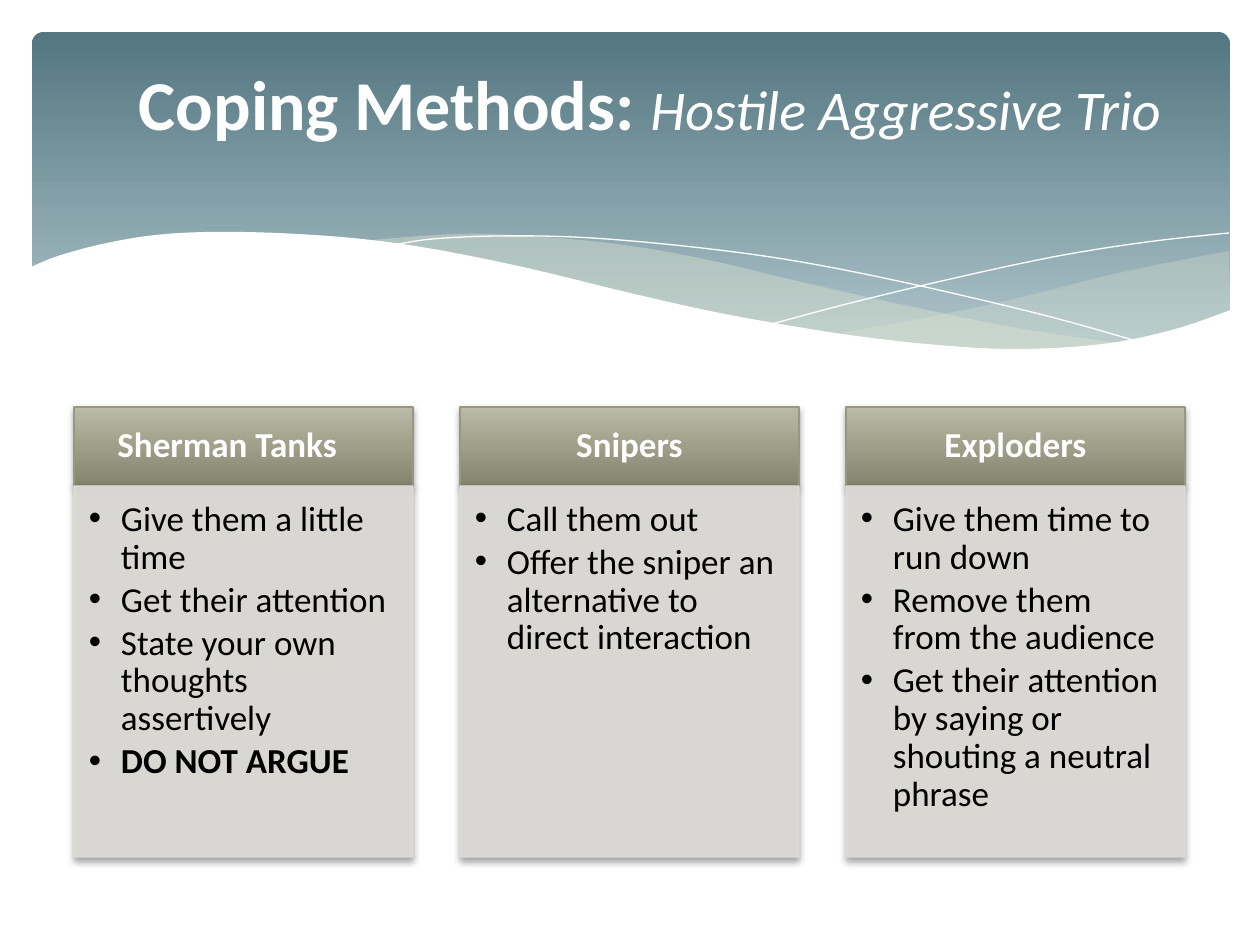
from lxml import etree
from pptx import Presentation
from pptx.dml.color import RGBColor
from pptx.enum.shapes import MSO_SHAPE
from pptx.enum.text import MSO_ANCHOR, PP_ALIGN
from pptx.oxml.ns import qn
from pptx.util import Emu, Pt

RECTANGLE, ROUNDED = MSO_SHAPE.RECTANGLE, MSO_SHAPE.ROUNDED_RECTANGLE
TOP, MIDDLE = MSO_ANCHOR.TOP, MSO_ANCHOR.MIDDLE
LEFT, CENTER = PP_ALIGN.LEFT, PP_ALIGN.CENTER

EMU_PER_PX = 914400 / 126
CURVE_STEPS = 6

WHITE, BLACK, MIST = "FFFFFF", "000000", "DFE6D0"
BANNER_STOPS = [("537680", 0), ("ACC2C9", 0.9)]
HEADER_STOPS = [("BBBAA6", 0), ("84836C", 1)]
HEADER_LINE, BODY_FILL = "99987F", "DEDDD8"

RIGHT_SWELL = [
    [(1229, 251), (1123, 272), (1014, 299), (919, 319), (833, 334)],
    [(833, 334), (888, 341), (954, 348), (1026, 350), (1099, 345), (1160, 334), (1230, 311)],
]
MIDDLE_SWELL = [
    [(1125, 344), (1017, 328), (890, 302), (793, 280), (699, 258), (616, 244),
     (529, 236), (455, 234), (360, 241)],
    [(360, 241), (456, 256), (566, 280), (668, 302), (757, 321), (857, 338),
     (942, 348), (1031, 350), (1092, 348), (1125, 344)],
]
FALLING_LINE = [[(389, 246), (433, 239), (505, 236), (591, 238), (701, 248),
                 (801, 262), (916, 285), (1047, 316), (1143, 343)]]
RISING_LINE = [[(772, 324), (847, 304), (942, 281), (1053, 257), (1147, 242), (1229, 233)]]
WHITE_WAVE = [
    [(1231, 310), (1172, 330), (1103, 344), (1019, 349), (937, 345), (842, 334),
     (730, 315), (634, 294), (527, 268), (427, 248), (341, 237), (243, 232),
     (166, 234), (107, 243), (58, 256), (29, 268)],
    [(29, 415)],
    [(1231, 415)],
]

COLUMNS = [
    ("Sherman Tanks\t", [
        ("Give them a little time", False),
        ("Get their attention", False),
        ("State your own thoughts assertively", False),
        ("DO NOT ARGUE", True),
    ]),
    ("Snipers", [
        ("Call them out", False),
        ("Offer the sniper an alternative to direct interaction", False),
    ]),
    ("Exploders", [
        ("Give them time to run down", False),
        ("Remove them from the audience", False),
        ("Get their attention by saying or shouting a neutral phrase", False),
    ]),
]
COLUMN_LEFT, COLUMN_PITCH, COLUMN_WIDTH = 74, 386, 339
HEADER_TOP, HEADER_HEIGHT, BODY_HEIGHT = 407, 79, 371


def px(length):
    return Emu(round(length * EMU_PER_PX))


def color(hex_string):
    return RGBColor.from_string(hex_string)


def smooth(knots):
    """Sample a Catmull-Rom curve that passes through the knots."""
    padded = [knots[0], *knots, knots[-1]]
    points = [knots[0]]
    for a, b, c, d in zip(padded, padded[1:], padded[2:], padded[3:]):
        for step in range(1, CURVE_STEPS + 1):
            t = step / CURVE_STEPS
            points.append(tuple(
                (2 * q + (r - p) * t + (2 * p - 5 * q + 4 * r - s) * t ** 2
                 + (3 * q - p - 3 * r + s) * t ** 3) / 2
                for p, q, r, s in zip(a, b, c, d)))
    return points


def set_opacity(shape, percent):
    for node in shape.element.spPr.iter(qn("a:srgbClr")):
        etree.SubElement(node, qn("a:alpha"), val=str(percent * 1000))


def drop_shadow(shape):
    effects = shape.element.spPr.find(qn("a:effectLst"))
    outer = etree.SubElement(effects, qn("a:outerShdw"), blurRad=str(Pt(4)),
                             dist=str(Pt(2)), dir="5400000", rotWithShape="0")
    shade = etree.SubElement(outer, qn("a:srgbClr"), val=BLACK)
    etree.SubElement(shade, qn("a:alpha"), val="38000")


class SlideBuilder:
    def __init__(self, slide, font="Calibri"):
        self.shapes = slide.shapes
        self.font = font

    def paint(self, shape, fill=None, line=None, line_width=0.75):
        """Fill with a hex colour, a list of gradient stops, or nothing."""
        shape.shadow.inherit = False
        if fill is None:
            shape.fill.background()
        elif isinstance(fill, str):
            shape.fill.solid()
            shape.fill.fore_color.rgb = color(fill)
        else:
            shape.fill.gradient()
            shape.fill.gradient_angle = 270
            for stop, (tint, position) in zip(shape.fill.gradient_stops, fill):
                stop.color.rgb = color(tint)
                stop.position = position
        if line is None:
            shape.line.fill.background()
        else:
            shape.line.color.rgb = color(line)
            shape.line.width = Pt(line_width)

    def box(self, kind, left, top, width, height, fill, line=None):
        shape = self.shapes.add_shape(kind, px(left), px(top), px(width), px(height))
        self.paint(shape, fill, line)
        return shape

    def wave(self, curves, fill=None, line=None):
        points = [(px(x), px(y)) for knots in curves for x, y in smooth(knots)]
        builder = self.shapes.build_freeform(*points[0])
        builder.add_line_segments(points[1:], close=fill is not None)
        shape = builder.convert_to_shape()
        self.paint(shape, fill, line, 0)
        return shape

    def text_box(self, left, top, width, height):
        return self.shapes.add_textbox(px(left), px(top), px(width), px(height))

    def frame(self, shape, anchor, insets=(13, 6, 13, 6)):
        frame = shape.text_frame
        frame.word_wrap = True
        frame.vertical_anchor = anchor
        (frame.margin_left, frame.margin_top,
         frame.margin_right, frame.margin_bottom) = map(px, insets)
        return frame

    def para(self, para, spans, align=LEFT, spacing=0.9, after=0):
        para.alignment = align
        para.line_spacing = spacing
        para.space_after = Pt(after)
        for text, size, tint, bold, italic in spans:
            span = para.add_run()
            span.text = text
            font = span.font
            font.name, font.size = self.font, Pt(size)
            font.bold, font.italic = bold, italic
            font.color.rgb = color(tint)

    def bullet(self, para):
        properties = para._p.get_or_add_pPr()
        properties.set("marL", str(px(32)))
        properties.set("indent", str(px(-32)))
        etree.SubElement(properties, qn("a:buFont"), typeface="Arial")
        etree.SubElement(properties, qn("a:buChar"), char="•")

    def column(self, left, heading, points):
        header = self.box(RECTANGLE, left, HEADER_TOP, COLUMN_WIDTH, HEADER_HEIGHT,
                          HEADER_STOPS, HEADER_LINE)
        drop_shadow(header)
        frame = self.frame(header, MIDDLE, (20, 11, 20, 11))
        self.para(frame.paragraphs[0], [(heading, 20, WHITE, True, False)], CENTER)

        body = self.box(RECTANGLE, left, HEADER_TOP + HEADER_HEIGHT, COLUMN_WIDTH,
                        BODY_HEIGHT, BODY_FILL, BODY_FILL)
        set_opacity(body, 90)
        drop_shadow(body)
        frame = self.frame(body, TOP, (15, 15, 20, 21))
        for index, (text, bold) in enumerate(points):
            para = frame.add_paragraph() if index else frame.paragraphs[0]
            self.para(para, [(text, 20, BLACK, bold, False)], after=3)
            self.bullet(para)


def main():
    deck = Presentation()
    deck.slide_width, deck.slide_height = px(1260), px(945)
    page = SlideBuilder(deck.slides.add_slide(deck.slide_layouts[6]))

    banner = page.box(ROUNDED, 32, 32, 1198, 340, BANNER_STOPS)
    banner.adjustments[0] = 0.034
    set_opacity(page.wave(RIGHT_SWELL, MIST), 29)
    set_opacity(page.wave(MIDDLE_SWELL, MIST), 40)
    page.wave(FALLING_LINE, line=WHITE)
    page.wave(RISING_LINE, line=WHITE)
    page.wave(WHITE_WAVE, WHITE)

    title = page.frame(page.text_box(126, 32, 1071, 157), MIDDLE)
    page.para(title.paragraphs[0], [
        ("Coping Methods: ", 40, WHITE, True, False),
        ("Hostile Aggressive Trio", 32, WHITE, False, True),
    ], spacing=0.8)

    for index, (heading, points) in enumerate(COLUMNS):
        page.column(COLUMN_LEFT + index * COLUMN_PITCH, heading, points)

    deck.save("out.pptx")


if __name__ == "__main__":
    main()
